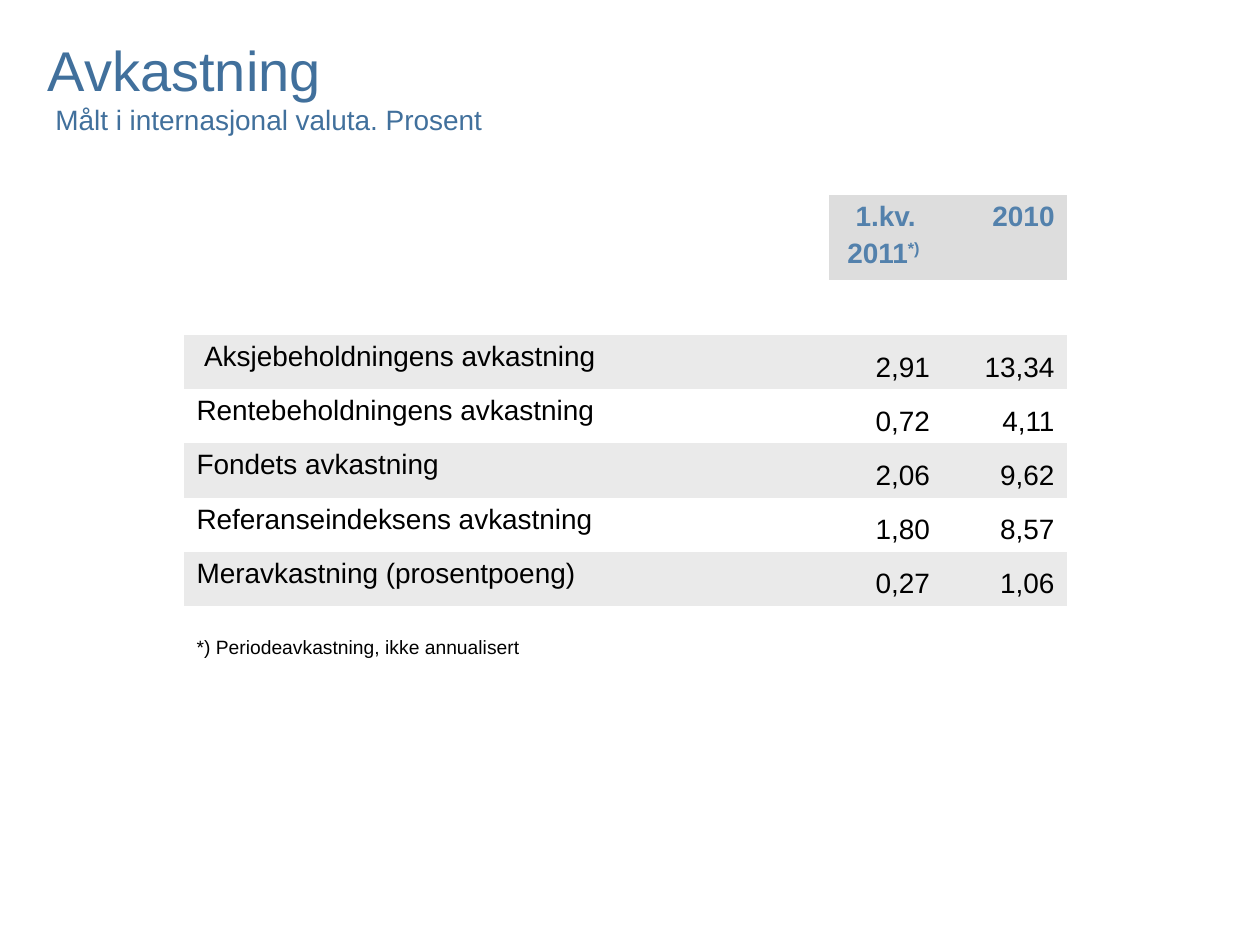
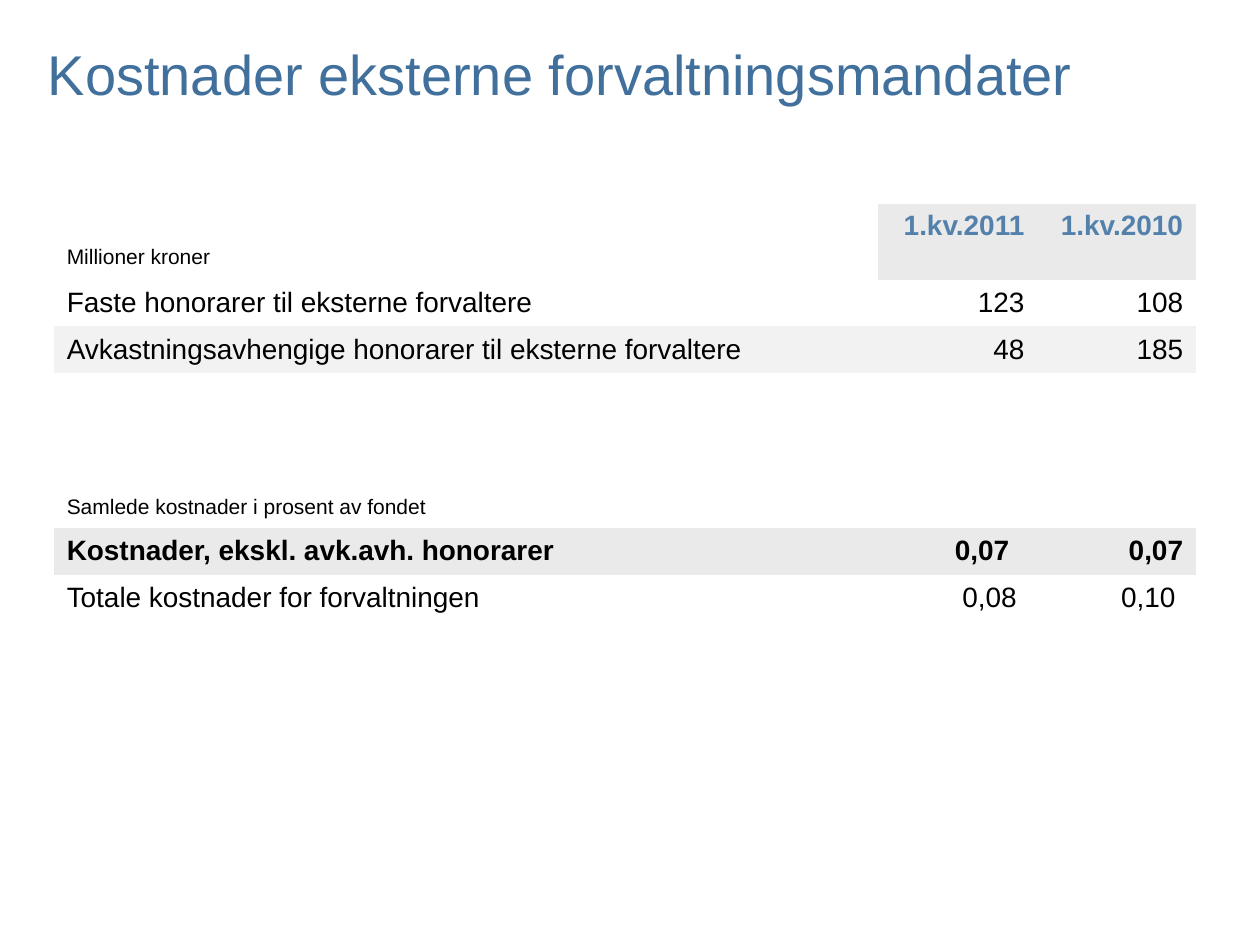
"""Build two slides with tables of fund returns and external management costs."""
from pptx import Presentation
from pptx.dml.color import RGBColor
from pptx.enum.text import MSO_ANCHOR, MSO_AUTO_SIZE, PP_ALIGN
from pptx.oxml.ns import qn
from pptx.util import Inches, Pt

TITLE_BLUE, HEADER_BLUE, BLACK = "41709C", "5381AC", "000000"
HEADER_GREY, BAND_GREY, PALE_GREY = "DDDDDD", "EAEAEA", "F2F2F2"
NO_STYLE_NO_GRID = "{2D5ABB26-0587-4C30-8999-92F81FD0307C}"
TOP, MIDDLE, BOTTOM = MSO_ANCHOR.TOP, MSO_ANCHOR.MIDDLE, MSO_ANCHOR.BOTTOM


def write(paragraph, text, size=16, colour=BLACK, bold=False):
    """Add one run to a paragraph and return it."""
    run = paragraph.add_run()
    run.text = text
    run.font.name = "Arial"
    run.font.size = Pt(size)
    run.font.bold = bold
    run.font.color.rgb = RGBColor.from_string(colour)
    return run


def add_plain_table(slide, left, top, widths, heights):
    """Add a table without style, borders or fills and return it."""
    table = slide.shapes.add_table(
        len(heights), len(widths), Inches(left), Inches(top),
        Inches(sum(widths)), Inches(sum(heights))).table
    table.first_row = table.horz_banding = False
    table._tbl.tblPr.find(qn("a:tableStyleId")).text = NO_STYLE_NO_GRID
    for column, width in zip(table.columns, widths):
        column.width = Inches(width)
    for row, height in zip(table.rows, heights):
        row.height = Inches(height)
    for cell in table.iter_cells():
        cell.fill.background()
    return table


prs = Presentation()
prs.slide_width, prs.slide_height = Inches(10), Inches(7.5)

slides, titles = [], []
for heading, top, width, height in [
    ("Avkastning", 0.23, 6.38, 0.91),
    ("Kostnader eksterne forvaltningsmandater", 0.26, 8.9, 0.64),
]:
    slide = prs.slides.add_slide(prs.slide_layouts[5])
    title = slide.shapes.title
    title.left, title.top = Inches(0.28), Inches(top)
    title.width, title.height = Inches(width), Inches(height)
    title.text_frame.auto_size = MSO_AUTO_SIZE.NONE
    title.text_frame.vertical_anchor = TOP
    title.text_frame.word_wrap = True
    title.text_frame.paragraphs[0].alignment = PP_ALIGN.LEFT
    write(title.text_frame.paragraphs[0], heading, 32, TITLE_BLUE)
    slides.append(slide)
    titles.append(title)
returns_slide, costs_slide = slides

subtitle = titles[0].text_frame.add_paragraph()
subtitle.alignment = PP_ALIGN.LEFT
subtitle._p.get_or_add_pPr().set("marL", str(Inches(0.06)))
write(subtitle, "Målt i internasjonal valuta. Prosent", 16, TITLE_BLUE)

returns = [
    ("Aksjebeholdningens avkastning", "2,91", "13,34"),
    ("Rentebeholdningens avkastning", "0,72", "4,11"),
    ("Fondets avkastning", "2,06", "9,62"),
    ("Referanseindeksens avkastning", "1,80", "8,57"),
    ("Meravkastning (prosentpoeng)", "0,27", "1,06"),
]
returns_table = add_plain_table(
    returns_slide, 1.46, 1.55, [5.12, 0.9, 0.99],
    [0.67, 0.44] + [0.43] * len(returns) + [0.48])

quarter, year = returns_table.cell(0, 1), returns_table.cell(0, 2)
for header in (quarter, year):
    header.fill.solid()
    header.fill.fore_color.rgb = RGBColor.from_string(HEADER_GREY)
quarter_line = quarter.text_frame.paragraphs[0]
year_line = quarter.text_frame.add_paragraph()
year_line.space_before = Pt(3)
quarter_line.alignment = year_line.alignment = PP_ALIGN.CENTER
write(quarter_line, "1.kv.", 16, HEADER_BLUE, True)
write(year_line, "2011", 16, HEADER_BLUE, True)
note_mark = write(year_line, "*) ", 16, HEADER_BLUE, True)
note_mark.font._element.set("baseline", "30000")
year.text_frame.paragraphs[0].alignment = PP_ALIGN.RIGHT
write(year.text_frame.paragraphs[0], "2010", 16, HEADER_BLUE, True)

for number, entries in enumerate(returns):
    for column, entry in enumerate(entries):
        cell = returns_table.cell(number + 2, column)
        cell.vertical_anchor = BOTTOM if column else TOP
        paragraph = cell.text_frame.paragraphs[0]
        paragraph.alignment = PP_ALIGN.RIGHT if column else PP_ALIGN.LEFT
        write(paragraph, entry)
        if number % 2 == 0:
            cell.fill.solid()
            cell.fill.fore_color.rgb = RGBColor.from_string(BAND_GREY)
returns_table.cell(2, 0).margin_left = Inches(0.16)

for row in (1, 7):
    returns_table.cell(row, 0).merge(returns_table.cell(row, 2))
footnote = returns_table.cell(7, 0)
footnote.margin_top = Inches(0.25)
write(footnote.text_frame.paragraphs[0], "*) Periodeavkastning, ikke annualisert", 11)

costs_table = add_plain_table(
    costs_slide, 0.43, 1.62, [6.54, 1.26, 1.26],
    [0.6, 0.37, 0.37, 0.39, 0.39, 0.42, 0.37, 0.37])

for row, caption, top_margin in [
    (0, "Millioner kroner", 0.33),
    (5, "Samlede kostnader i prosent av fondet", 0.16),
]:
    cell = costs_table.cell(row, 0)
    cell.margin_top = Inches(top_margin)
    write(cell.text_frame.paragraphs[0], caption, 12)

for column, period in enumerate(["1.kv.2011", "1.kv.2010"], 1):
    header = costs_table.cell(0, column)
    header.fill.solid()
    header.fill.fore_color.rgb = RGBColor.from_string(BAND_GREY)
    header.text_frame.paragraphs[0].alignment = PP_ALIGN.RIGHT
    write(header.text_frame.paragraphs[0], period, 16, HEADER_BLUE, True)

for row, fill, bold, right_margins, entries in [
    (1, None, False, (0.1, 0.1),
     ("Faste honorarer til eksterne forvaltere", "123", "108")),
    (2, PALE_GREY, False, (0.1, 0.1),
     ("Avkastningsavhengige honorarer til eksterne forvaltere", "48", "185")),
    (6, BAND_GREY, True, (0.22, 0.1),
     ("Kostnader, ekskl. avk.avh. honorarer", "0,07", "0,07")),
    (7, None, False, (0.16, 0.16),
     ("Totale kostnader for forvaltningen", "0,08", "0,10")),
]:
    for column, entry in enumerate(entries):
        cell = costs_table.cell(row, column)
        cell.vertical_anchor = MIDDLE
        paragraph = cell.text_frame.paragraphs[0]
        write(paragraph, entry, bold=bold)
        if column:
            paragraph.alignment = PP_ALIGN.RIGHT
            cell.margin_right = Inches(right_margins[column - 1])
        if fill:
            cell.fill.solid()
            cell.fill.fore_color.rgb = RGBColor.from_string(fill)

prs.save("out.pptx")
